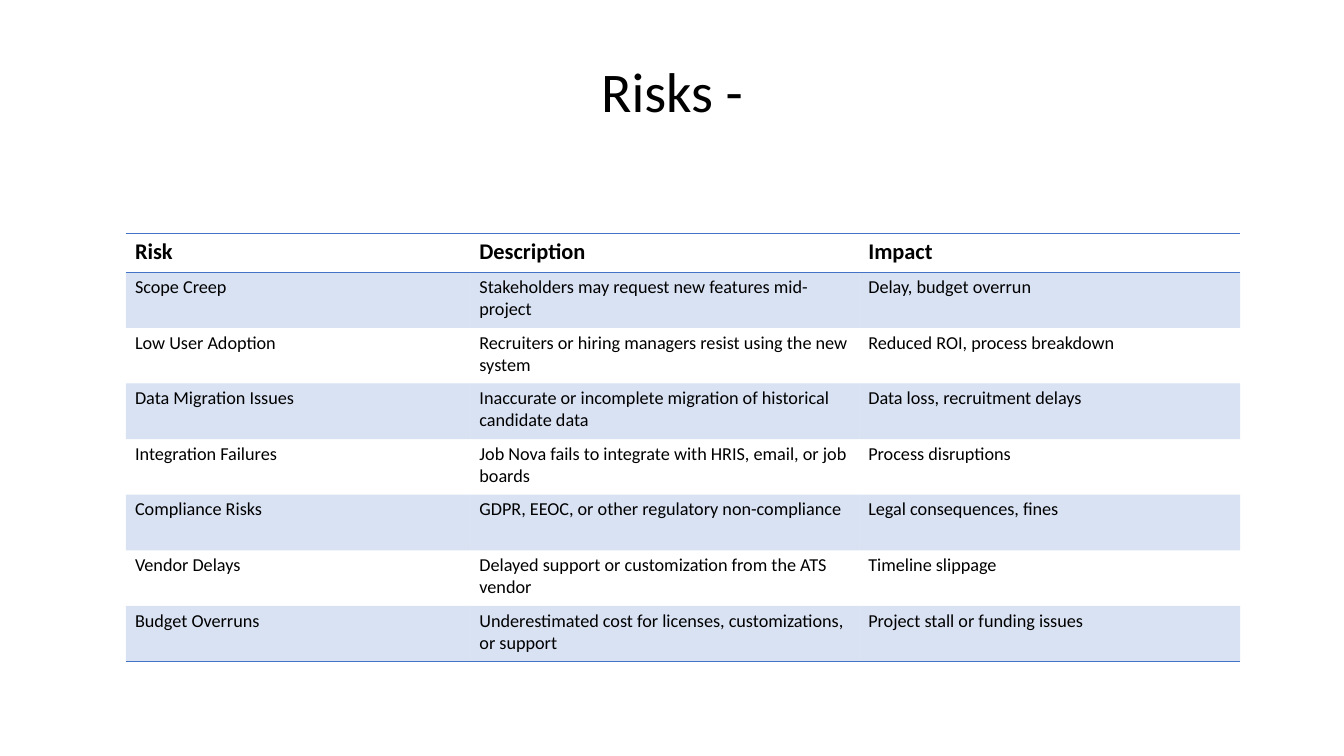
from lxml.etree import SubElement
from pptx import Presentation
from pptx.dml.color import RGBColor
from pptx.enum.shapes import MSO_SHAPE as Shape
from pptx.enum.text import MSO_ANCHOR as Anchor, PP_ALIGN as Align
from pptx.oxml.ns import qn
from pptx.util import Inches, Pt

COLORS = {"text": "000000", "paper": "FFFFFF", "accent": "4472C4"}
PLAIN_TABLE = "{2D5ABB26-0587-4C30-8999-92F81FD0307C}"
BAND_ALPHA = 20  # percent
COLS, ROWS = 32, 25  # slide grid

RISKS = [
    ("Risk", "Description", "Impact"),
    ("Scope Creep", "Stakeholders may request new features mid-project",
     "Delay, budget overrun"),
    ("Low User Adoption",
     "Recruiters or hiring managers resist using the new system",
     "Reduced ROI, process breakdown"),
    ("Data Migration Issues",
     "Inaccurate or incomplete migration of historical candidate data",
     "Data loss, recruitment delays"),
    ("Integration Failures",
     "Job Nova fails to integrate with HRIS, email, or job boards",
     "Process disruptions"),
    ("Compliance Risks", "GDPR, EEOC, or other regulatory non-compliance",
     "Legal consequences, fines"),
    ("Vendor Delays", "Delayed support or customization from the ATS vendor",
     "Timeline slippage"),
    ("Budget Overruns",
     "Underestimated cost for licenses, customizations, or support",
     "Project stall or funding issues"),
]


class SlideBuilder:
    font = "Calibri"

    def __init__(self, prs):
        self.slide = prs.slides.add_slide(prs.slide_layouts[5])
        self.col = prs.slide_width / COLS
        self.row = prs.slide_height / ROWS

    def x(self, cols):
        return round(cols * self.col)

    def y(self, rows):
        return round(rows * self.row)

    def box(self, left, top, width, height):
        return self.x(left), self.y(top), self.x(width), self.y(height)

    def style(self, p, size, bold=False):
        p.font.name = self.font
        p.font.size = Pt(size)
        p.font.bold = bold
        p.font.color.rgb = RGBColor.from_string(COLORS["text"])

    def band(self, *area):
        sp = self.slide.shapes.add_shape(Shape.RECTANGLE, *self.box(*area))
        sp.shadow.inherit = False
        sp.fill.solid()
        sp.fill.fore_color.rgb = RGBColor.from_string(COLORS["paper"])
        sp.line.fill.background()
        # Send behind the title
        self.slide.shapes.title._element.addprevious(sp._element)

    def title(self, text, *area):
        sp = self.slide.shapes.title
        sp.left, sp.top, sp.width, sp.height = self.box(*area)
        tf = sp.text_frame
        tf.text = text
        tf.vertical_anchor = Anchor.MIDDLE
        p = tf.paragraphs[0]
        p.alignment = Align.CENTER
        p.line_spacing = 0.9
        self.style(p, 40)

    def border(self, cell, side):
        ln = SubElement(cell._tc.get_or_add_tcPr(), qn(f"a:ln{side}"), w=str(Pt(1)))
        fill = SubElement(ln, qn("a:solidFill"))
        SubElement(fill, qn("a:srgbClr"), val=COLORS["accent"])

    def shade(self, cell):
        cell.fill.solid()
        cell.fill.fore_color.rgb = RGBColor.from_string(COLORS["accent"])
        color = cell._tc.tcPr.find(f".//{qn('a:solidFill')}[last()]/{qn('a:srgbClr')}") \
            if not len(cell._tc.tcPr) else cell._tc.tcPr[-1][0]
        SubElement(color, qn("a:alpha"), val=str(BAND_ALPHA * 1000))

    def table(self, data, left, top, widths, head_height, row_height):
        heights = [head_height] + [row_height] * (len(data) - 1)
        area = self.box(left, top, sum(widths), sum(heights))
        table = self.slide.shapes.add_table(len(data), len(widths), *area).table
        table._tbl.tblPr.find(qn("a:tableStyleId")).text = PLAIN_TABLE
        table.horz_banding = False
        for column, width in zip(table.columns, widths):
            column.width = self.x(width)
        for i, (values, height) in enumerate(zip(data, heights)):
            table.rows[i].height = self.y(height)
            sides = "TB" if i == 0 else "B" if i == len(data) - 1 else ""
            for j, value in enumerate(values):
                cell = table.cell(i, j)
                cell.margin_left = cell.margin_right = Inches(0.09)
                cell.margin_top = cell.margin_bottom = Inches(0.04)
                cell.text = value
                self.style(cell.text_frame.paragraphs[0], 13 if i else 16, i == 0)
                for side in sides:
                    self.border(cell, side)
                if i % 2:
                    self.shade(cell)
                else:
                    cell.fill.background()


def main():
    prs = Presentation()
    prs.slide_width, prs.slide_height = Inches(13.33), Inches(7.5)
    page = SlideBuilder(prs)

    # Heading
    page.band(0, 0, COLS, 6.2)
    page.title("Risks -", 3, 1, 26, 4.23)

    # Risk register
    page.table(RISKS, 3, 7.73, widths=(8.2, 9.26, 9.07),
               head_height=1.27, row_height=1.84)
    prs.save("out.pptx")


if __name__ == "__main__":
    main()
